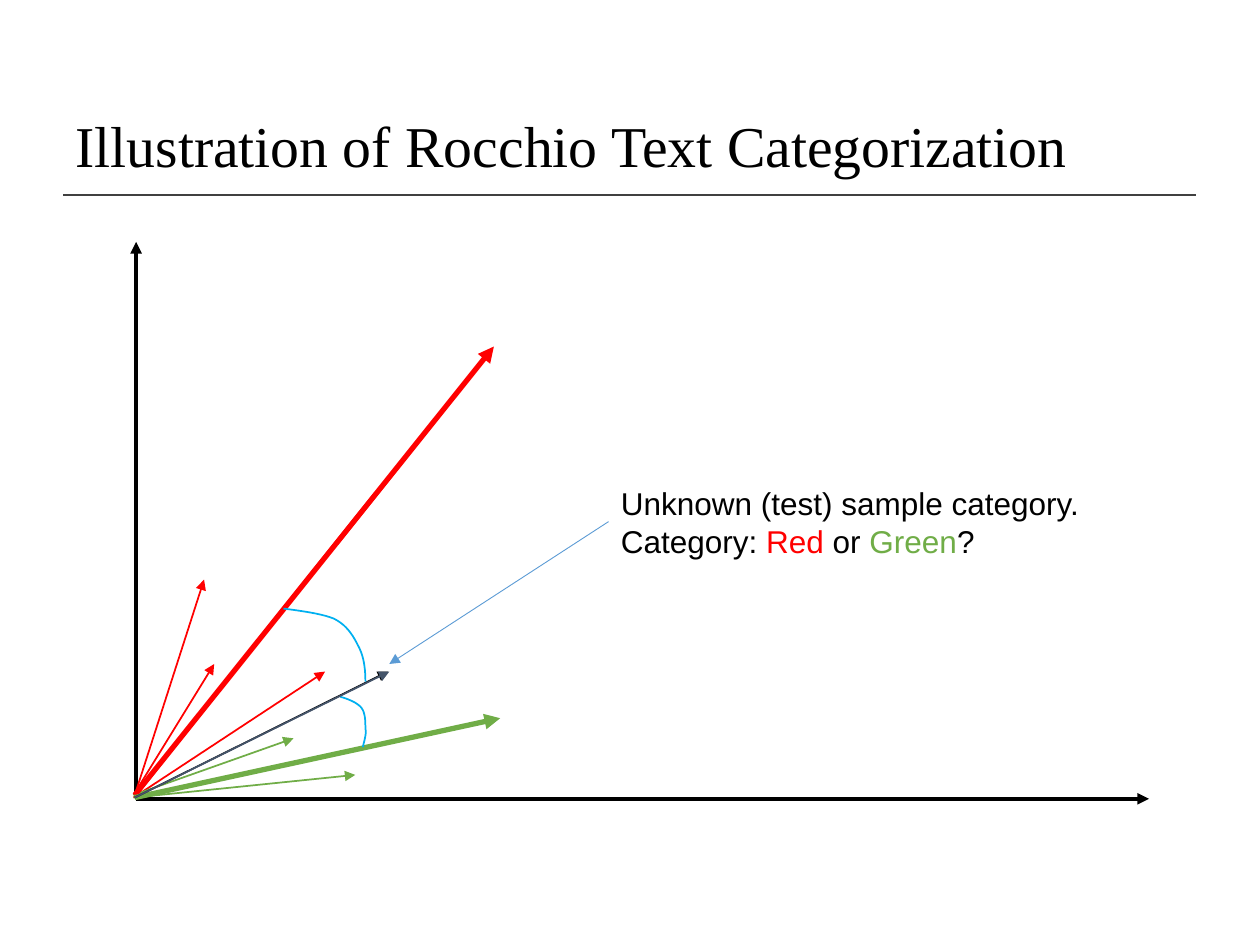
from lxml import etree
from pptx import Presentation
from pptx import util as u
from pptx.dml.color import RGBColor
from pptx.enum import shapes, text
from pptx.oxml import ns

BLACK, RED, GREEN, NAVY = "000000", "FF0000", "70AD47", "44546A"
BLUE, CYAN, GRAY = "5B9BD5", "00B0F0", "404040"

deck = Presentation()
deck.slide_width, deck.slide_height = u.Inches(10), u.Inches(7.5)
page = deck.slides.add_slide(deck.slide_layouts[5])

# The page is a grid of 10 columns by 7.5 rows.
column = deck.slide_width / 10
row = deck.slide_height / 7.5


def place(x, y):
    """Turn a grid position into slide units."""
    return round(x * column), round(y * row)


def draw_line(start, end, color, width, arrow=True):
    line = page.shapes.add_connector(
        shapes.MSO_CONNECTOR.STRAIGHT, *place(*start), *place(*end))
    line.line.color.rgb = RGBColor.from_string(color)
    line.line.width = u.Pt(width)
    if arrow:
        etree.SubElement(line.line._get_or_add_ln(), ns.qn("a:tailEnd"), type="triangle")
    etree.SubElement(line._element.spPr, ns.qn("a:effectLst"))


# Title and its rule
draw_line((0.5, 1.55), (9.49, 1.55), GRAY, 1, arrow=False)
title = page.shapes.title
title.left, title.top = place(0.5, 0.83)
title.width, title.height = place(9.08, 0.7)
title.text_frame.text = "Illustration of Rocchio Text Categorization"
title.text_frame.vertical_anchor = text.MSO_ANCHOR.MIDDLE
para = title.text_frame.paragraphs[0]
para.alignment = text.PP_ALIGN.LEFT
para.line_spacing = 0.9
for name, value in {"name": "Times New Roman", "size": u.Pt(33)}.items():
    setattr(para.runs[0].font, name, value)
para.runs[0].font.color.rgb = RGBColor.from_string(BLACK)

# Axes
draw_line((1.08, 6.33), (1.08, 1.92), BLACK, 2.25)
draw_line((1.08, 6.34), (9.12, 6.34), BLACK, 2.25)

# Sample vectors are thin, category prototypes are thick
vectors = [
    ((1.07, 6.31), (1.62, 4.6), RED, 1),
    ((1.06, 6.31), (1.7, 5.27), RED, 1),
    ((1.06, 6.33), (2.58, 5.33), RED, 1),
    ((1.06, 6.33), (2.82, 6.15), GREEN, 1),
    ((1.06, 6.31), (2.33, 5.86), GREEN, 1),
    ((1.07, 6.31), (3.92, 2.75), RED, 3),
    ((1.07, 6.33), (3.97, 5.7), GREEN, 3),
    ((1.07, 6.33), (3.08, 5.33), BLACK, 1),
]
for vector in vectors:
    draw_line(*vector)

# Angle arcs: a start point, then cubic Bezier pieces (two controls and an end)
arcs = [
    [(2.25, 4.83), (2.4, 4.85), (2.55, 4.87), (2.65, 4.91), (2.75, 4.96),
     (2.8, 5.04), (2.84, 5.12), (2.89, 5.21), (2.9, 5.31), (2.9, 5.41)],
    [(2.7, 5.53), (2.77, 5.55), (2.84, 5.58), (2.87, 5.62), (2.9, 5.66),
     (2.9, 5.73), (2.9, 5.78), (2.91, 5.83), (2.89, 5.88), (2.88, 5.93)],
]
STEPS = 10
for arc in arcs:
    points = []
    for first in range(0, len(arc) - 1, 3):
        for step in range(1, STEPS + 1):
            t = step / STEPS
            weights = ((1 - t) ** 3, 3 * t * (1 - t) ** 2, 3 * t ** 2 * (1 - t), t ** 3)
            piece = list(zip(weights, arc[first:first + 4]))
            points.append(place(sum(w * p[0] for w, p in piece),
                                sum(w * p[1] for w, p in piece)))
    outline = page.shapes.build_freeform(*place(*arc[0]))
    outline.add_line_segments(points, close=False)
    curve = outline.convert_to_shape()
    curve.shadow.inherit = False
    curve.fill.background()
    curve.line.color.rgb = RGBColor.from_string(CYAN)
    curve.line.width = u.Pt(1)

# Unknown sample and its label
draw_line((1.07, 6.33), (3.09, 5.33), NAVY, 1)
box = page.shapes.add_textbox(*place(4.83, 3.79), *place(3.94, 0.71))
frame = box.text_frame
frame.word_wrap = False
frame.auto_size = text.MSO_AUTO_SIZE.SHAPE_TO_FIT_TEXT
label = [
    [("Unknown (test) sample category.", BLACK)],
    [("Category: ", BLACK), ("Red", RED), (" or ", BLACK), ("Green", GREEN), ("?", BLACK)],
]
for index, spans in enumerate(label):
    para = frame.add_paragraph() if index else frame.paragraphs[0]
    for words, color in spans:
        span = para.add_run()
        span.text = words
        for name, value in {"name": "Arial", "size": u.Pt(18)}.items():
            setattr(span.font, name, value)
        span.font.color.rgb = RGBColor.from_string(color)
draw_line((4.83, 4.14), (3.09, 5.27), BLUE, 0.5)

deck.save("out.pptx")
